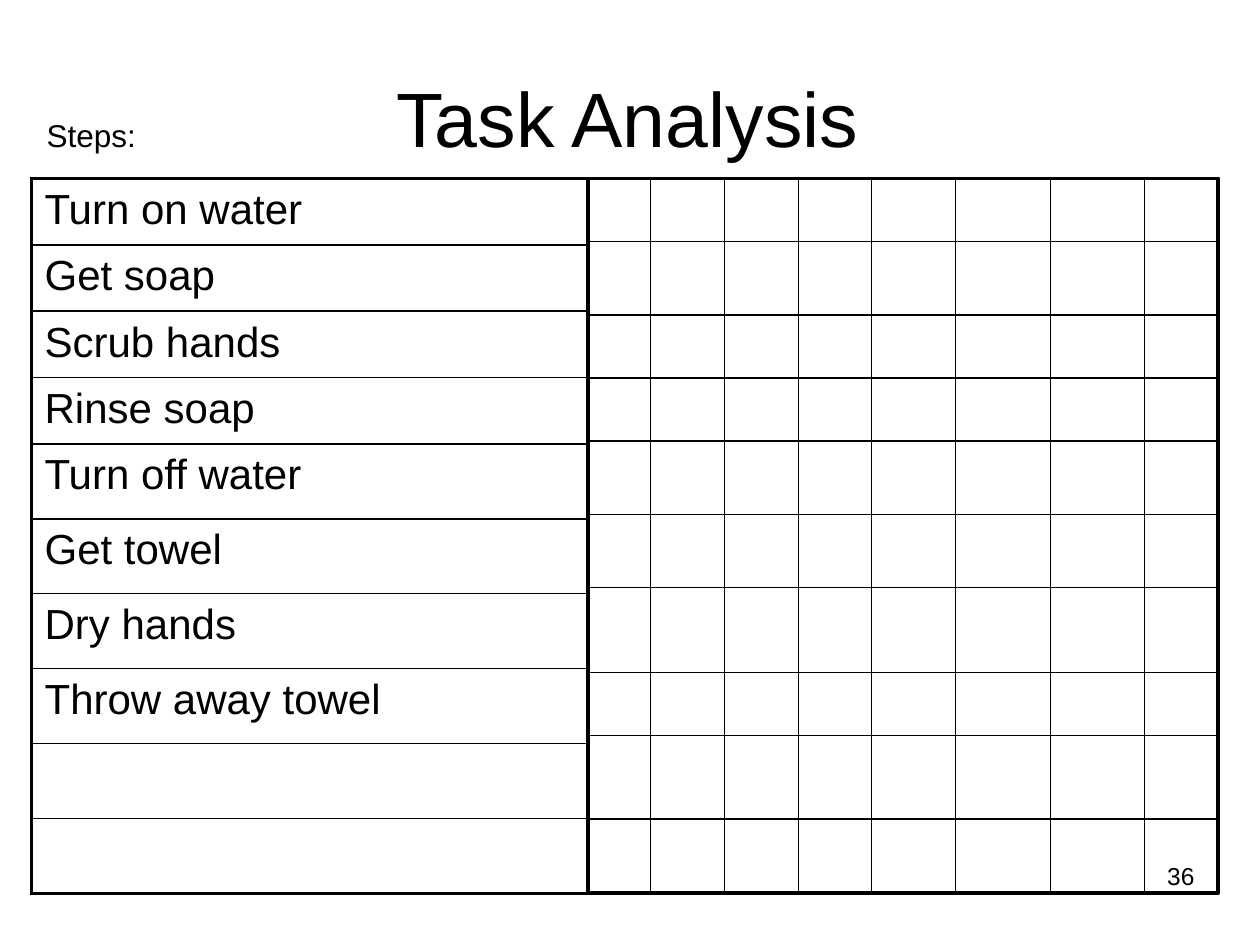
import pptx
import pptx.dml.color
import pptx.enum.shapes
import pptx.enum.text
import pptx.oxml.ns
import pptx.util
from lxml import etree
from pptx.util import Cm, Pt

TITLE = "Task Analysis"
STEPS_LABEL = "Steps:"
PAGE_NUMBER = "36"
STEPS = ["Turn on water", "Get soap", "Scrub hands", "Rinse soap", "Turn off water",
         "Get towel", "Dry hands", "Throw away towel", "", ""]
COLOURS = {"ink": "000000", "paper": "FFFFFF"}
FONT = "Arial"

# Lengths in centimetres
SHEET_TOP, SHEET_HEIGHT = 3.6, 14.4
STEPS_LEFT, STEPS_WIDTH = 0.64, 11.22
SHORT_ROWS, SHORT_ROW, TALL_ROW = 4, 1.33, 1.51
GRID_LEFT, GRID_WIDTH = 11.86, 12.7
GRID_ROWS = [4.87, 6.35, 7.62, 8.89, 10.37, 11.85, 13.55, 14.82, 16.51]
GRID_COLUMNS = [13.12, 14.61, 16.09, 17.57, 19.26, 21.17, 23.07]
INSET, INDENT = 0.16, 0.1
THICK, MEDIUM, THIN = 2.25, 1, 0.75

ALIGN = pptx.enum.text.PP_ALIGN
ANCHOR = pptx.enum.text.MSO_ANCHOR


def colour(name):
    return pptx.dml.color.RGBColor.from_string(COLOURS[name])


def write(frame, text, size, align=ALIGN.LEFT):
    paragraph = frame.paragraphs[0]
    paragraph.alignment = align
    properties = paragraph._p.get_or_add_pPr()
    properties.set("marL", str(Cm(INDENT)))
    properties.set("indent", "0")
    run = paragraph.add_run()
    run.text = text
    run.font.name = FONT
    run.font.size = Pt(size)
    run.font.color.rgb = colour("ink")


def set_insets(owner, left, top, right, bottom):
    owner.margin_left, owner.margin_top = Cm(left), Cm(top)
    owner.margin_right, owner.margin_bottom = Cm(right), Cm(bottom)


def add_label(slide, box, text, size, align=ALIGN.LEFT):
    frame = slide.shapes.add_textbox(*map(Cm, box)).text_frame
    frame.word_wrap = True
    set_insets(frame, 0, 0, 0.1, 0)
    write(frame, text, size, align)


def set_borders(cell, widths):
    """Draw cell borders; widths maps the sides L, R, T, B to points."""
    properties = cell._tc.get_or_add_tcPr()
    for side, width in widths.items():
        border = etree.SubElement(properties, pptx.oxml.ns.qn(f"a:ln{side}"), w=str(Pt(width)))
        fill = etree.SubElement(border, pptx.oxml.ns.qn("a:solidFill"))
        etree.SubElement(fill, pptx.oxml.ns.qn("a:srgbClr"), val=COLOURS["ink"])


def add_steps(slide):
    table = slide.shapes.add_table(
        len(STEPS), 1, Cm(STEPS_LEFT), Cm(SHEET_TOP), Cm(STEPS_WIDTH), Cm(SHEET_HEIGHT)).table
    table.first_row = table.horz_banding = False
    last = len(STEPS) - 1
    for index, step in enumerate(STEPS):
        table.rows[index].height = Cm(SHORT_ROW if index < SHORT_ROWS else TALL_ROW)
        cell = table.cell(index, 0)
        set_insets(cell, INSET, INSET, INSET, INSET)
        set_borders(cell, {"L": THICK, "R": THICK,
                           "T": THICK if index == 0 else MEDIUM,
                           "B": THICK if index == last else MEDIUM})
        cell.fill.background()
        if step:
            write(cell.text_frame, step, 24)


def add_rule(slide, *ends):
    rule = slide.shapes.add_connector(
        pptx.enum.shapes.MSO_CONNECTOR.STRAIGHT, *map(Cm, ends))
    rule.line.color.rgb = colour("ink")
    rule.line.width = Pt(THIN)
    etree.SubElement(rule._element.spPr, pptx.oxml.ns.qn("a:effectLst"))


def add_grid(slide):
    frame = slide.shapes.add_shape(
        pptx.enum.shapes.MSO_SHAPE.RECTANGLE,
        Cm(GRID_LEFT), Cm(SHEET_TOP), Cm(GRID_WIDTH), Cm(SHEET_HEIGHT))
    frame.shadow.inherit = False
    frame.fill.background()
    frame.line.color.rgb = colour("ink")
    frame.line.width = Pt(THICK)
    for y in GRID_ROWS:
        add_rule(slide, GRID_LEFT, y, GRID_LEFT + GRID_WIDTH, y)
    for x in GRID_COLUMNS:
        add_rule(slide, x, SHEET_TOP, x, SHEET_TOP + SHEET_HEIGHT)


def add_title(slide):
    title = slide.shapes.title
    title.left, title.top, title.width, title.height = map(Cm, (1.27, 0.25, 22.86, 4.19))
    frame = title.text_frame
    frame.vertical_anchor = ANCHOR.MIDDLE
    frame.auto_size = pptx.enum.text.MSO_AUTO_SIZE.NONE
    set_insets(frame, INSET, INSET, 0.36, INSET)
    write(frame, TITLE, 44, ALIGN.CENTER)


def main():
    deck = pptx.Presentation()
    deck.slide_width, deck.slide_height = Cm(25.4), Cm(19.05)
    slide = deck.slides.add_slide(deck.slide_layouts.get_by_name("Title Only"))
    slide.background.fill.solid()
    slide.background.fill.fore_color.rgb = colour("paper")
    add_label(slide, (18.21, 17.35, 5.97, 0.84), PAGE_NUMBER, 14, ALIGN.RIGHT)
    add_title(slide)
    add_steps(slide)
    add_label(slide, (0.84, 2.34, 4.47, 0.99), STEPS_LABEL, 18)
    add_grid(slide)
    deck.save("out.pptx")


if __name__ == "__main__":
    main()
